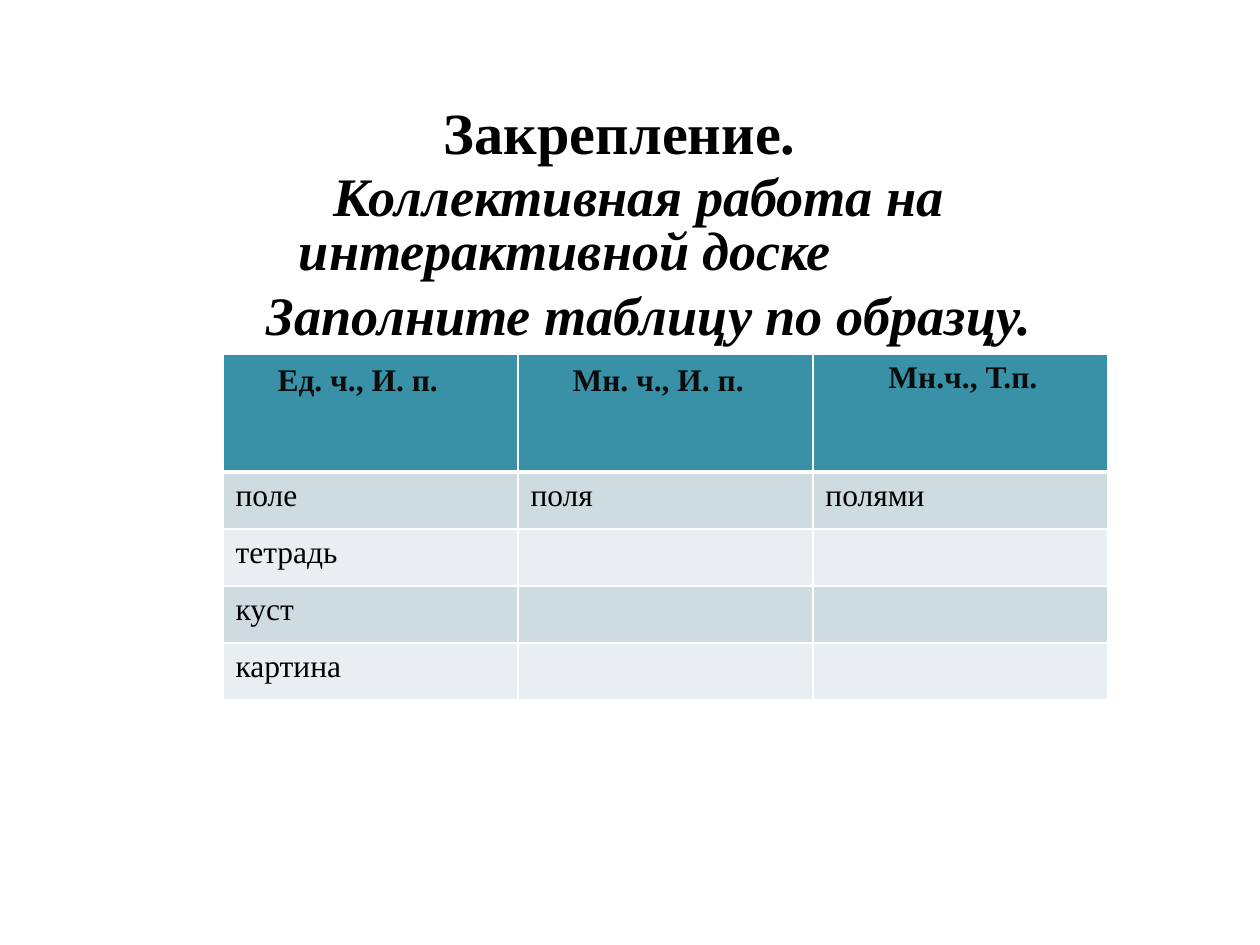
from lxml import etree
from pptx import Presentation
from pptx.dml.color import RGBColor
from pptx.enum.text import MSO_ANCHOR, MSO_AUTO_SIZE, PP_ALIGN
from pptx.oxml.ns import qn
from pptx.util import Emu, Pt

LEFT = PP_ALIGN.LEFT
TOP = MSO_ANCHOR.TOP
NO_AUTOFIT = MSO_AUTO_SIZE.NONE
FONT = "Times New Roman"
COLORS = {
    "text": "000000",
    "header_text": "0D0D0D",
    "header": "3891A7",
    "odd_row": "CEDCE1",
    "even_row": "E8EEF1",
    "border": "FFFFFF",
}


def px(pixels):
    return Emu(round(pixels * 914400 / 126))


def format_paragraph(paragraph, size, color, bold=False, italic=False, margin=0, indent=0):
    paragraph.alignment = LEFT
    paragraph.font.name = FONT
    paragraph.font.size = Pt(size)
    paragraph.font.bold = bold
    paragraph.font.italic = italic
    paragraph.font.color.rgb = RGBColor.from_string(COLORS[color])
    properties = paragraph._p.get_or_add_pPr()
    properties.set("marL", str(px(margin)))
    properties.set("indent", str(px(indent)))


presentation = Presentation()
presentation.slide_width = px(1260)
presentation.slide_height = px(945)
slide = presentation.slides.add_slide(presentation.slide_layouts[5])

# Title and instructions
title = slide.shapes.title
title.left, title.top, title.width, title.height = px(444), px(108), px(740), px(58)
instructions = slide.shapes.add_textbox(px(267), px(173), px(917), px(170))
for shape in (title, instructions):
    frame = shape.text_frame
    frame.word_wrap = True
    frame.auto_size = NO_AUTOFIT
    frame.vertical_anchor = TOP
    frame.margin_left = frame.margin_top = frame.margin_right = frame.margin_bottom = 0

title.text_frame.text = "Закрепление."
heading = title.text_frame.paragraphs[0]
format_paragraph(heading, 33.3, "text", bold=True)
heading.line_spacing = 0.83

instructions.text_frame.text = (
    "Коллективная работа на интерактивной доске\nЗаполните таблицу по образцу."
)
task, example = instructions.text_frame.paragraphs
format_paragraph(task, 31, "text", bold=True, italic=True, margin=32, indent=35)
format_paragraph(example, 31, "text", bold=True, italic=True)
task.line_spacing = example.line_spacing = 0.83
example.space_before = Pt(6.2)

# Table of noun forms
rows = [
    ["Ед. ч., И. п.", "Мн. ч., И. п.", "Мн.ч., Т.п."],
    ["поле", "поля", "полями"],
    ["тетрадь", "", ""],
    ["куст", "", ""],
    ["картина", "", ""],
]
header_margins = [42, 42, 63]
header_tops = [9, 9, 6]
table = slide.shapes.add_table(5, 3, px(223), px(354), px(885), px(346)).table
for column in table.columns:
    column.width = px(295)
for row_index, texts in enumerate(rows):
    is_header = row_index == 0
    table.rows[row_index].height = px(118 if is_header else 57)
    row_color = "header" if is_header else "odd_row" if row_index % 2 else "even_row"
    for column_index, text in enumerate(texts):
        cell = table.cell(row_index, column_index)
        cell.text = text
        cell.fill.solid()
        cell.fill.fore_color.rgb = RGBColor.from_string(COLORS[row_color])
        paragraph = cell.text_frame.paragraphs[0]
        if is_header:
            cell.margin_top = px(header_tops[column_index])
            format_paragraph(paragraph, 18, "header_text", bold=True,
                             margin=header_margins[column_index])
        else:
            format_paragraph(paragraph, 18, "text")

        # White borders, with a thick rule below the header
        cell_properties = cell._tc.get_or_add_tcPr()
        for position, side in enumerate(("lnL", "lnR", "lnT", "lnB")):
            thick = (row_index, side) in ((0, "lnB"), (1, "lnT"))
            line = etree.Element(qn(f"a:{side}"), w=str(Pt(3 if thick else 1)))
            fill = etree.SubElement(line, qn("a:solidFill"))
            etree.SubElement(fill, qn("a:srgbClr"), val=COLORS["border"])
            cell_properties.insert(position, line)

presentation.save("out.pptx")
